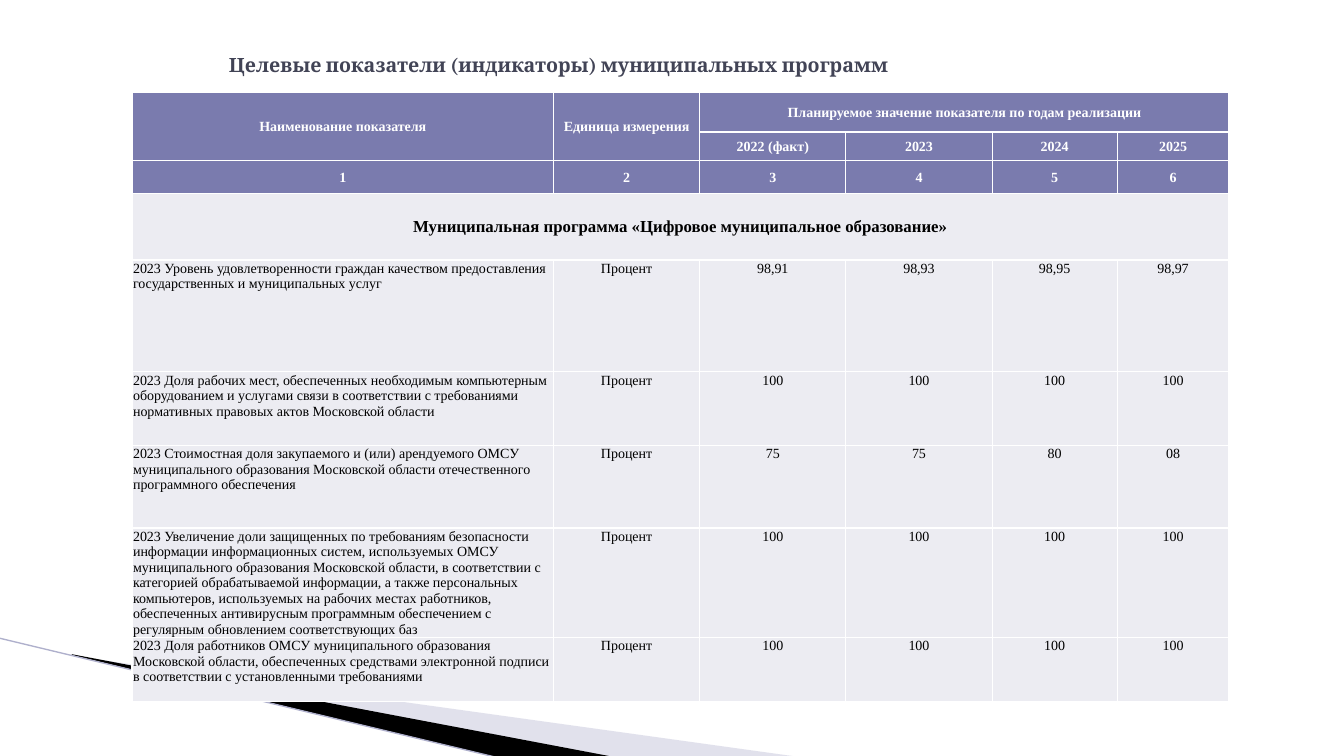
from lxml.etree import SubElement
from pptx import Presentation
from pptx.dml.color import RGBColor
from pptx.enum.shapes import MSO_CONNECTOR
from pptx.enum.text import MSO_ANCHOR, MSO_AUTO_SIZE, PP_ALIGN
from pptx.oxml.ns import qn
from pptx.util import Pt

PX = 9144  # 100 px to the inch
WHITE, BLACK = "FFFFFF", "000000"
HEADER_FILL, BODY_FILL = "7A7BAE", "ECECF2"
rgb = RGBColor.from_string


def write(frame, text, font="Times New Roman", size=10, color=BLACK, bold=False,
          align=PP_ALIGN.CENTER):
    paragraph = frame.paragraphs[0]
    paragraph.alignment = align
    run = paragraph.add_run()
    run.text = text
    run.font.name = font
    run.font.size = Pt(size)
    run.font.bold = bold
    run.font.color.rgb = rgb(color)


def add_border(cell):
    """Draw a white 1 pt line on all four sides; call before the cell is filled."""
    props = cell._tc.get_or_add_tcPr()
    for side in ("lnL", "lnR", "lnT", "lnB"):
        line = SubElement(props, qn(f"a:{side}"), w=str(Pt(1)))
        fill = SubElement(line, qn("a:solidFill"))
        SubElement(fill, qn("a:srgbClr"), val=WHITE)


prs = Presentation()
prs.slide_width, prs.slide_height = 1333 * PX, 750 * PX
slide = prs.slides.add_slide(prs.slide_layouts[5])

# Corner decoration
wedges = [
    ("B6B6D1", 40, [(73, 651), (793, 751), (608, 751), (73, 650)]),
    (BLACK, 100, [(71, 649), (609, 751), (496, 752), (72, 650)]),
]
for color, opacity, points in wedges:
    builder = slide.shapes.build_freeform(*points[0], scale=PX)
    builder.add_line_segments(points[1:], close=True)
    wedge = builder.convert_to_shape()
    wedge.shadow.inherit = False
    wedge.line.fill.background()
    wedge.fill.solid()
    wedge.fill.fore_color.rgb = rgb(color)
    if opacity < 100:
        tint = wedge._element.spPr.find(qn("a:solidFill"))[0]
        SubElement(tint, qn("a:alpha"), val=str(opacity * 1000))

edge = slide.shapes.add_connector(MSO_CONNECTOR.STRAIGHT, -1 * PX, 633 * PX, 495 * PX, 752 * PX)
edge.line.color.rgb = rgb("AFB0CC")
edge.line.width = Pt(0.95)
SubElement(edge._element.spPr, qn("a:effectLst"))

# Title
title = slide.shapes.title
title.left, title.top, title.width, title.height = 217 * PX, 30 * PX, 900 * PX, 69 * PX
title.text_frame.auto_size = MSO_AUTO_SIZE.NONE
title.text_frame.vertical_anchor = MSO_ANCHOR.MIDDLE
write(title.text_frame, "Целевые показатели (индикаторы) муниципальных программ",
      font="Cambria", size=14, color="424456", bold=True, align=PP_ALIGN.LEFT)

# Table of indicators
header_rows = [
    ["Наименование показателя", "Единица измерения",
     "Планируемое значение показателя по годам реализации", "", "", ""],
    ["", "", "2022 (факт)", "2023", "2024", "2025"],
    ["1", "2", "3", "4", "5", "6"],
]
program_row = ["Муниципальная программа «Цифровое муниципальное образование»"] + [""] * 5
indicators = [
    ("2023 Уровень удовлетворенности граждан качеством предоставления "
     "государственных и муниципальных услуг", ["98,91", "98,93", "98,95", "98,97"]),
    ("2023 Доля рабочих мест, обеспеченных необходимым компьютерным оборудованием "
     "и услугами связи в соответствии с требованиями нормативных правовых актов "
     "Московской области", ["100"] * 4),
    ("2023 Стоимостная доля закупаемого и (или) арендуемого ОМСУ муниципального "
     "образования Московской области отечественного программного обеспечения",
     ["75", "75", "80", "08"]),
    ("2023 Увеличение доли защищенных по требованиям безопасности информации "
     "информационных систем, используемых ОМСУ муниципального образования Московской "
     "области, в соответствии с категорией обрабатываемой информации, а также "
     "персональных компьютеров, используемых на рабочих местах работников, обеспеченных "
     "антивирусным программным обеспечением с регулярным обновлением соответствующих баз",
     ["100"] * 4),
    ("2023 Доля работников ОМСУ муниципального образования Московской области, "
     "обеспеченных средствами электронной подписи в соответствии с установленными "
     "требованиями", ["100"] * 4),
]
rows = header_rows + [program_row]
rows += [[name, "Процент", *values] for name, values in indicators]
column_widths = [418, 145, 145, 145, 124, 111]
row_heights = [39, 28, 33, 66, 111, 73, 82, 64, 64]
program_index = len(header_rows)

table = slide.shapes.add_table(len(rows), len(column_widths), 131 * PX, 92 * PX,
                               sum(column_widths) * PX, sum(row_heights) * PX).table
table.first_row = table.horz_banding = False
for column, width in zip(table.columns, column_widths):
    column.width = width * PX
for row, height in zip(table.rows, row_heights):
    row.height = height * PX

for r, texts in enumerate(rows):
    is_header, is_indicator = r < program_index, r > program_index
    for c, text in enumerate(texts):
        cell = table.cell(r, c)
        add_border(cell)
        cell.fill.solid()
        cell.fill.fore_color.rgb = rgb(HEADER_FILL if is_header else BODY_FILL)
        cell.margin_left = cell.margin_right = cell.margin_top = PX
        cell.margin_bottom = 0
        cell.vertical_anchor = MSO_ANCHOR.TOP if is_indicator else MSO_ANCHOR.MIDDLE
        if text:
            write(cell.text_frame, text,
                  size=12 if r == program_index else 10,
                  color=WHITE if is_header else BLACK,
                  bold=not is_indicator,
                  align=PP_ALIGN.LEFT if is_indicator and c == 0 else PP_ALIGN.CENTER)

for first, last in [((0, 0), (1, 0)), ((0, 1), (1, 1)), ((0, 2), (0, 5)),
                    ((program_index, 0), (program_index, 5))]:
    table.cell(*first).merge(table.cell(*last))

prs.save("out.pptx")
